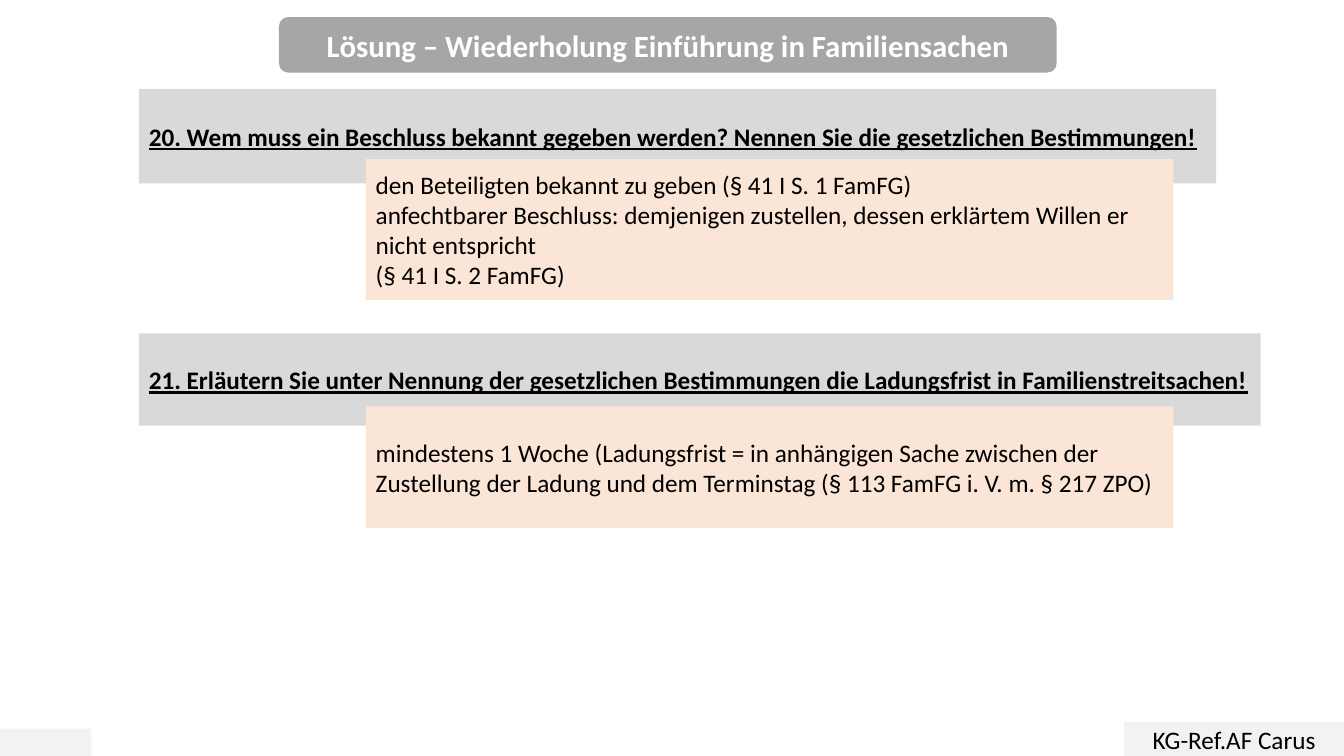
from dataclasses import dataclass

from pptx import Presentation
from pptx import util as u
from pptx.dml.color import RGBColor
from pptx.enum import shapes, text


@dataclass(frozen=True)
class Theme:
    font: str = "Calibri"
    title_size: int = 22
    body_size: int = 18
    ink: str = "000000"
    title_ink: str = "FFFFFF"
    title_fill: str = "A6A6A6"
    question_fill: str = "D9D9D9"
    answer_fill: str = "FBE5D6"
    footer_fill: str = "F2F2F2"


THEME = Theme()
WIDTH, HEIGHT = 33.87, 19.05  # cm
LEFT, CENTER = text.PP_ALIGN.LEFT, text.PP_ALIGN.CENTER

# Question box, question, answer offset (down, height), answer paragraphs
EXERCISES = [
    ((3.5, 2.24, 27.15, 2.38),
     "20. Wem muss ein Beschluss bekannt gegeben werden? Nennen Sie die gesetzlichen Bestimmungen!",
     (1.77, 3.55),
     ["den Beteiligten bekannt zu geben (§ 41 I S. 1 FamFG)",
      "anfechtbarer Beschluss: demjenigen zustellen, dessen erklärtem Willen er nicht entspricht "
      "\n(§ 41 I S. 2 FamFG)"]),
    ((3.5, 8.4, 28.27, 2.33),
     "21. Erläutern Sie unter Nennung der gesetzlichen Bestimmungen die Ladungsfrist "
     "in Familienstreitsachen!",
     (1.84, 3.07),
     ["mindestens 1 Woche (Ladungsfrist = in anhängigen Sache zwischen der Zustellung "
      "der Ladung und dem Terminstag (§ 113 FamFG i. V. m. § 217 ZPO)"]),
]


def add_panel(slide, box, fill, paragraphs=(), align=LEFT, ink=THEME.ink,
              outline=shapes.MSO_SHAPE.RECTANGLE, **font_format):
    """Borderless filled panel with vertically centred text."""
    panel = slide.shapes.add_shape(outline, *map(u.Cm, box))
    panel.shadow.inherit = False
    panel.fill.solid()
    panel.fill.fore_color.rgb = RGBColor.from_string(fill)
    panel.line.fill.background()

    frame = panel.text_frame
    frame.word_wrap = True
    frame.vertical_anchor = text.MSO_ANCHOR.MIDDLE
    settings = {"name": THEME.font, "size": u.Pt(THEME.body_size)} | font_format
    for index, wording in enumerate(paragraphs):
        paragraph = frame.add_paragraph() if index else frame.paragraphs[0]
        paragraph.text = wording
        paragraph.alignment = align
        for run in paragraph.runs:
            for key, value in settings.items():
                setattr(run.font, key, value)
            run.font.color.rgb = RGBColor.from_string(ink)


def add_title(slide, box):
    add_panel(slide, box, THEME.title_fill,
              ["Lösung – Wiederholung Einführung in Familiensachen"],
              align=CENTER, ink=THEME.title_ink,
              outline=shapes.MSO_SHAPE.ROUNDED_RECTANGLE,
              size=u.Pt(THEME.title_size), bold=True)


def add_exercise(slide, box, question, answer_offset, answer):
    """Question bar with the answer overlapping its lower edge."""
    left, top, _, _ = box
    down, height = answer_offset
    add_panel(slide, box, THEME.question_fill, [question], bold=True, underline=True)
    add_panel(slide, (left + 5.72, top + down, 20.35, height), THEME.answer_fill, answer)


def add_footer(slide, box):
    """Empty tab at the left end, course name at the right end."""
    left, top, width, height = box
    tab_height, course_width = 0.69, 5.54
    add_panel(slide, (left, top + height - tab_height, 2.3, tab_height), THEME.footer_fill)
    add_panel(slide, (left + width - course_width, top, course_width, height),
              THEME.footer_fill, ["KG-Ref.AF Carus"], align=CENTER)


def main():
    deck = Presentation()
    deck.slide_width, deck.slide_height = u.Cm(WIDTH), u.Cm(HEIGHT)
    slide = deck.slides.add_slide(deck.slide_layouts[6])

    add_title(slide, (7.03, 0.43, 19.6, 1.4))
    for exercise in EXERCISES:
        add_exercise(slide, *exercise)
    add_footer(slide, (0, HEIGHT - 0.85, WIDTH, 0.85))

    deck.save("out.pptx")


if __name__ == "__main__":
    main()
